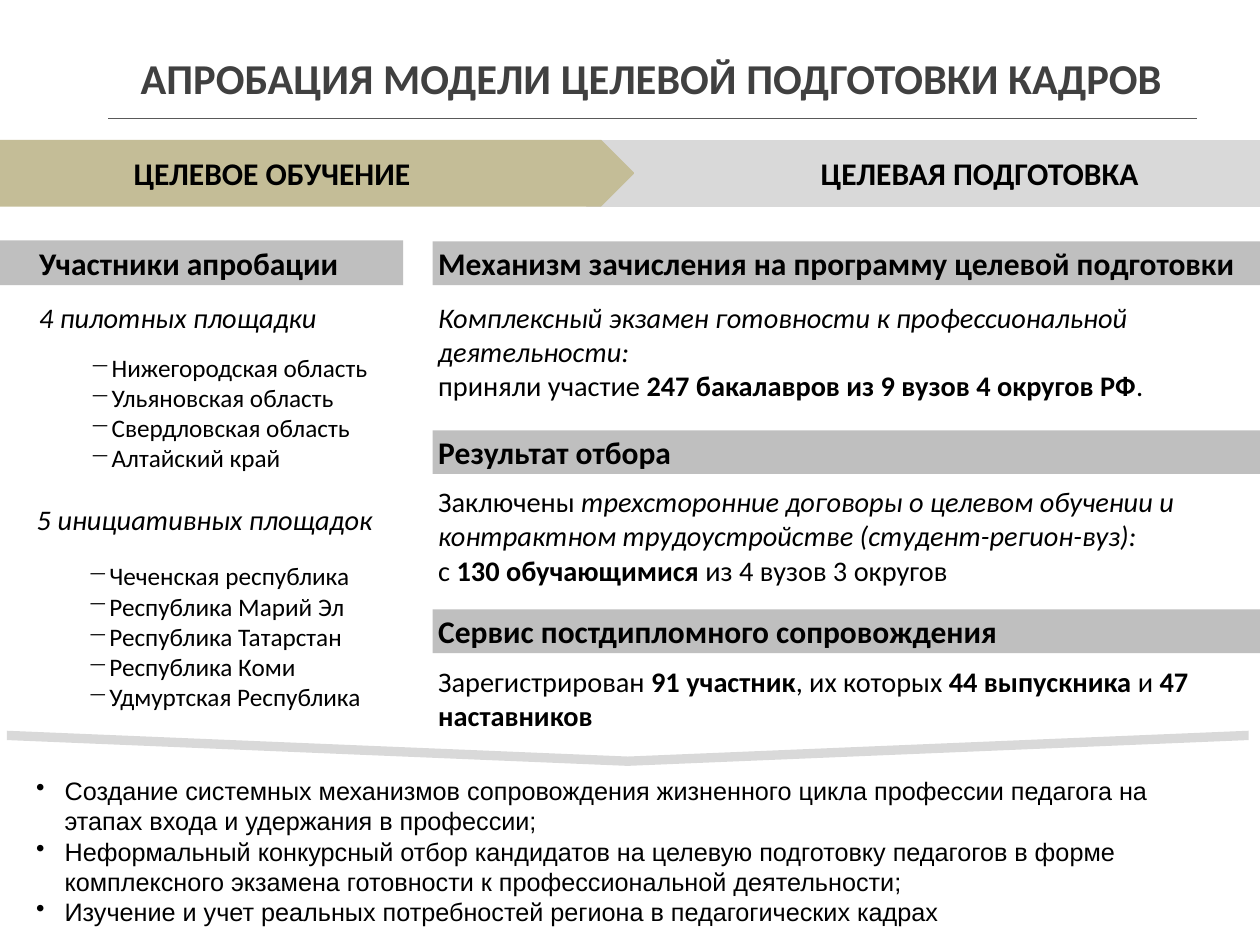
from lxml.etree import SubElement
from pptx import Presentation
from pptx.dml.color import RGBColor
from pptx.enum.shapes import MSO_CONNECTOR, MSO_SHAPE
from pptx.enum.text import MSO_ANCHOR, MSO_AUTO_SIZE, PP_ALIGN
from pptx.oxml.ns import qn
from pptx.util import Inches, Pt

WIDTH, HEIGHT = 22.22, 16.67
COLORS = {"title": "404040", "text": "000000", "rule": "595959", "bar": "BFBFBF",
          "stage": "C4BD97", "pale": "D9D9D9"}

# Text is a list of paragraphs; a paragraph is a list of (text, style) runs: b bold, i italic
TITLE = "АПРОБАЦИЯ МОДЕЛИ ЦЕЛЕВОЙ ПОДГОТОВКИ КАДРОВ"
STAGES = [  # label, shape, colour, left, width, label left, label top
    ("ЦЕЛЕВАЯ ПОДГОТОВКА", MSO_SHAPE.RECTANGLE, "pale", 10.34, 11.88, 13.07, 2.67),
    ("ЦЕЛЕВОЕ ОБУЧЕНИЕ", MSO_SHAPE.PENTAGON, "stage", 0, 11.17, 0.59, 2.66),
]
PARTICIPANTS = "Участники апробации"
SITES = [  # heading, heading left, heading top, list top, regions
    ("4 пилотных площадки", 0, 5.24, 6.16,
     ["Нижегородская область", "Ульяновская область", "Свердловская область", "Алтайский край"]),
    ("5 инициативных площадок", -0.04, 8.81, 9.84,
     ["Чеченская республика", "Республика Марий Эл", "Республика Татарстан",
      "Республика Коми", "Удмуртская Республика"]),
]
SECTIONS = [  # heading, bar top, text top, paragraphs
    ("Механизм зачисления на программу целевой подготовки", 4.26, 5.24, [
        [("Комплексный экзамен готовности к профессиональной деятельности:", "i")],
        [("приняли участие ", ""), ("247 бакалавров из 9 вузов 4 округов РФ", "b"), (".", "")]]),
    ("Результат отбора", 7.59, 8.5, [
        [("Заключены ", ""), ("трехсторонние договоры о целевом обучении и контрактном "
                              "трудоустройстве (студент-регион-вуз):", "i")],
        [("с ", ""), ("130 обучающимися ", "b"), ("из 4 вузов 3 округов", "")]]),
    ("Сервис постдипломного сопровождения", 10.75, 11.66, [
        [("Зарегистрирован ", ""), ("91 участник", "b"), (", их которых ", ""),
         ("44 выпускника", "b"), (" и ", ""), ("47 наставников", "b")]]),
]
OUTCOMES = [
    "Создание системных механизмов сопровождения жизненного цикла профессии педагога "
    "на этапах входа и удержания в профессии;",
    "Неформальный конкурсный отбор кандидатов на целевую подготовку педагогов в форме "
    "комплексного экзамена готовности к профессиональной деятельности;",
    "Изучение и учет реальных потребностей региона в педагогических кадрах",
]

RIGHT_COLUMN = 7.63
LEFT_INDENT = 0.59
LINE = 1.22 / 72  # inches of line height per point
STAGE_TOP, STAGE_HEIGHT = 2.48, 1.15


def color(name):
    return RGBColor.from_string(COLORS[name])


def plain(lines, style=""):
    return [[(line, style)] for line in lines]


def write(shape, paragraphs, size, font="Calibri", align=PP_ALIGN.LEFT, ink="text",
          bullet=None, margin=0, hanging=0):
    frame = shape.text_frame
    frame.word_wrap = True
    for number, runs in enumerate(paragraphs):
        paragraph = frame.paragraphs[0] if number == 0 else frame.add_paragraph()
        paragraph.alignment = align
        properties = paragraph._p.get_or_add_pPr()
        properties.set("marL", str(Inches(margin)))
        properties.set("indent", str(-Inches(hanging)))
        if bullet:
            SubElement(properties, qn("a:buChar"), char=bullet)
        for text, style in runs:
            run = paragraph.add_run()
            run.text = text
            values = {"name": font, "size": Pt(size), "bold": "b" in style, "italic": "i" in style}
            for key, value in values.items():
                setattr(run.font, key, value)
            run.font.color.rgb = color(ink)


def add_text(slide, left, top, width, paragraphs, size, **layout):
    height = 0.1 + LINE * size * len(paragraphs)
    box = slide.shapes.add_textbox(*map(Inches, (left, top, width, height)))
    write(box, paragraphs, size, **layout)
    box.text_frame.auto_size = MSO_AUTO_SIZE.SHAPE_TO_FIT_TEXT


def add_block(slide, kind, left, top, width, height, fill, outline=0):
    block = slide.shapes.add_shape(kind, *map(Inches, (left, top, width, height)))
    block.shadow.inherit = False
    block.fill.solid()
    block.fill.fore_color.rgb = color(fill)
    if outline:
        block.line.color.rgb = color(fill)
        block.line.width = Pt(outline)
    else:
        block.line.fill.background()
    return block


def add_title(slide):
    title = slide.shapes.title
    title.left, title.top, title.width, title.height = map(Inches, (1.49, 0.67, 20, 1.41))
    write(title, plain([TITLE], "b"), 54, align=PP_ALIGN.CENTER, ink="title")
    title.text_frame.auto_size = MSO_AUTO_SIZE.NONE
    title.text_frame.vertical_anchor = MSO_ANCHOR.MIDDLE
    for side, inset in {"left": 0.22, "right": 0.22, "top": 0.11, "bottom": 0.11}.items():
        setattr(title.text_frame, f"margin_{side}", Inches(inset))
    rule = slide.shapes.add_connector(
        MSO_CONNECTOR.STRAIGHT, *map(Inches, (1.91, 2.08, 21.11, 2.08)))
    rule.line.color.rgb = color("rule")
    rule.line.width = Pt(0.75)
    SubElement(rule._element.spPr, qn("a:effectLst"))


def add_stages(slide):
    for label, kind, fill, left, width, label_left, label_top in STAGES:
        add_block(slide, kind, left, STAGE_TOP, width, STAGE_HEIGHT, fill, outline=2)
        add_text(slide, label_left, label_top, 8.41, plain([label], "b"), 40,
                 align=PP_ALIGN.CENTER)


def add_participants(slide):
    bar = add_block(slide, MSO_SHAPE.RECTANGLE, 0, 4.24, 7.11, 0.79, "bar")
    write(bar, plain([PARTICIPANTS], "b"), 40, margin=LEFT_INDENT)
    for heading, left, top, list_top, regions in SITES:
        add_text(slide, left, top, RIGHT_COLUMN - left, plain([heading], "i"), 36,
                 margin=LEFT_INDENT)
        list_left = left + 1.49
        add_text(slide, list_left, list_top, RIGHT_COLUMN - list_left, plain(regions), 32,
                 align=PP_ALIGN.JUSTIFY, bullet="−", margin=0.38, hanging=0.38)


def add_sections(slide):
    for heading, bar_top, text_top, paragraphs in SECTIONS:
        bar = add_block(slide, MSO_SHAPE.RECTANGLE, RIGHT_COLUMN, bar_top,
                        WIDTH - RIGHT_COLUMN, 0.77, "bar")
        write(bar, plain([heading], "b"), 40)
        add_text(slide, RIGHT_COLUMN, text_top, 14.22, paragraphs, 36)


def add_outcomes(slide):
    add_text(slide, 0.54, 13.63, 21.31, plain(OUTCOMES), 32, font="Arial",
             bullet="•", margin=0.5, hanging=0.5)
    arrow = add_block(slide, MSO_SHAPE.CHEVRON, 10.76, 2.25, 0.62, 21.9, "pale")
    arrow.adjustments[0] = 0.734
    arrow.rotation = 90


def main():
    presentation = Presentation()
    presentation.slide_width, presentation.slide_height = Inches(WIDTH), Inches(HEIGHT)
    slide = presentation.slides.add_slide(presentation.slide_layouts[5])
    for add_part in (add_title, add_stages, add_participants, add_sections, add_outcomes):
        add_part(slide)
    presentation.save("out.pptx")


if __name__ == "__main__":
    main()
